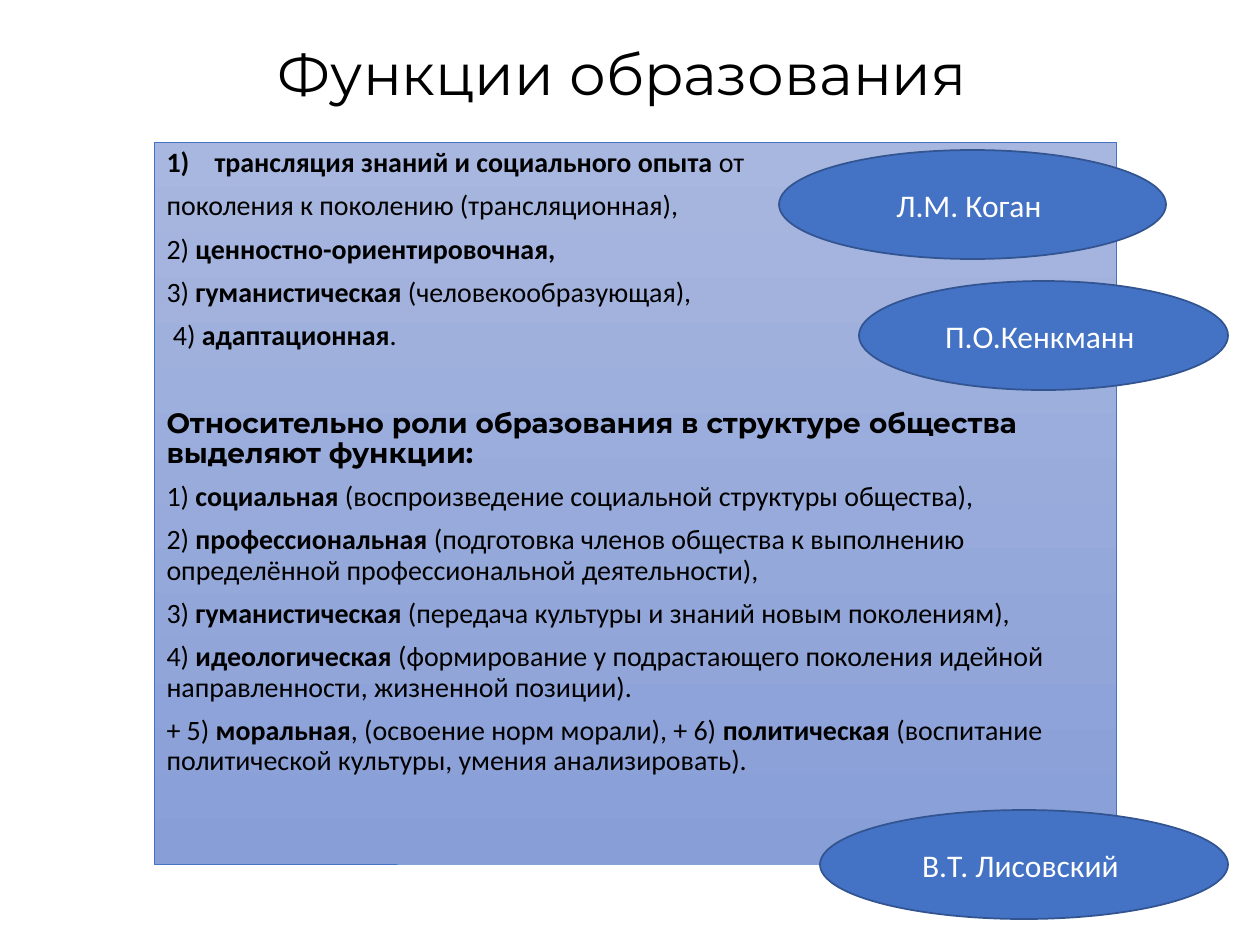
from lxml.etree import SubElement
from pptx import Presentation
from pptx.dml.color import RGBColor
from pptx.enum.shapes import MSO_SHAPE
from pptx.enum.text import MSO_ANCHOR, MSO_AUTO_SIZE, PP_ALIGN
from pptx.oxml.ns import qn
from pptx.util import Emu, Pt

PX = 914400 / 126
COLORS = {
    "text": "000000",
    "light": "FFFFFF",
    "panel_top": "A8B7DF",
    "panel_bottom": "889ED7",
    "accent": "4472C4",
    "outline": "325491",
}
TITLE = "Функции образования "
FUNCTIONS = [
    "**трансляция знаний и социального опыта **от",
    "поколения к поколению (трансляционная),",
    "2) **ценностно-ориентировочная,**",
    "3) **гуманистическая** (человекообразующая),",
    " 4) **адаптационная**.",
]
HEADING = "**Относительно роли образования в структуре общества выделяют функции:**"
ROLES = [
    "1) **социальная** (воспроизведение социальной структуры общества),",
    "2) **профессиональная** (подготовка членов общества к выполнению "
    "определённой профессиональной деятельности),",
    "3) **гуманистическая **(передача культуры и знаний новым поколениям),",
    "4) **идеологическая** (формирование у подрастающего поколения идейной "
    "направленности, жизненной позиции).",
    "+ 5) **моральная**, (освоение норм морали), + 6) **политическая** "
    "(воспитание политической культуры, умения анализировать).",
]
AUTHORS = [
    ("Л.М. Коган ", (779, 150, 387, 109)),
    ("П.О.Кенкманн ", (859, 281, 369, 109)),
    ("В.Т. Лисовский ", (820, 810, 408, 109)),
]


def px(length):
    """Turn pixels into EMU."""
    return Emu(round(length * PX))


def color(name):
    """Look up a palette colour."""
    return RGBColor.from_string(COLORS[name])


def place(shape, left, top, width, height):
    """Move and size a shape."""
    shape.left, shape.top = px(left), px(top)
    shape.width, shape.height = px(width), px(height)


def write(para, text, size=16, font="Calibri", ink="text", align=PP_ALIGN.LEFT,
          spacing=0.9, before=0):
    """Fill a paragraph; text between double asterisks is bold."""
    para.alignment = align
    para.line_spacing = spacing
    para.space_before = Pt(before)
    for index, part in enumerate(text.split("**")):
        if part:
            span = para.add_run()
            span.text = part
            span.font.size = Pt(size)
            span.font.name = font
            span.font.bold = index % 2 == 1
            span.font.color.rgb = color(ink)


def set_bullet(para, indent=0, numbered=False):
    """Number a paragraph with a hanging indent, or remove its bullet."""
    properties = para._p.get_or_add_pPr()
    properties.set("marL", str(px(indent)))
    properties.set("indent", str(-px(indent)))
    if numbered:
        SubElement(properties, qn("a:buFont"), typeface="+mj-lt")
        SubElement(properties, qn("a:buAutoNum"), type="arabicParenR")
    else:
        SubElement(properties, qn("a:buNone"))


def add_title(page):
    """Format the title placeholder."""
    title = page.shapes.title
    place(title, 63, 38, 1134, 77)
    frame = title.text_frame
    frame.auto_size = MSO_AUTO_SIZE.NONE
    frame.vertical_anchor = MSO_ANCHOR.MIDDLE
    write(frame.paragraphs[0], TITLE, size=33, font="Montserrat", align=PP_ALIGN.CENTER)


def add_body(page):
    """Fill the body placeholder with both lists on a gradient panel."""
    panel = page.placeholders[1]
    place(panel, 154, 142, 963, 722)
    panel.fill.gradient()
    panel.fill.gradient_angle = 270
    for stop, name in zip(panel.fill.gradient_stops, ("panel_top", "panel_bottom")):
        stop.color.rgb = color(name)
    panel.line.color.rgb = color("accent")
    panel.line.width = Pt(0.5)
    frame = panel.text_frame
    frame.auto_size = MSO_AUTO_SIZE.NONE
    frame.vertical_anchor = MSO_ANCHOR.TOP
    for index, text in enumerate([*FUNCTIONS, HEADING, *ROLES]):
        para = frame.paragraphs[0] if index == 0 else frame.add_paragraph()
        if text == HEADING:
            write(para, text, font="Montserrat", before=32.5)
        else:
            write(para, text, before=7.5)
        set_bullet(para, indent=48 if index == 0 else 0, numbered=index == 0)


def add_author(page, name, bounds):
    """Add an ellipse with an author's name."""
    ellipse = page.shapes.add_shape(MSO_SHAPE.OVAL, *map(px, bounds))
    ellipse.shadow.inherit = False
    ellipse.fill.solid()
    ellipse.fill.fore_color.rgb = color("accent")
    ellipse.line.color.rgb = color("outline")
    ellipse.line.width = Pt(1)
    frame = ellipse.text_frame
    frame.word_wrap = True
    frame.vertical_anchor = MSO_ANCHOR.MIDDLE
    write(frame.paragraphs[0], name, size=18, ink="light", align=PP_ALIGN.CENTER, spacing=1.0)


def main():
    """Build and save the deck."""
    deck = Presentation()
    deck.slide_width, deck.slide_height = px(1260), px(945)
    page = deck.slides.add_slide(deck.slide_layouts[1])
    add_title(page)
    add_body(page)
    for name, bounds in AUTHORS:
        add_author(page, name, bounds)
    deck.save("out.pptx")


if __name__ == "__main__":
    main()
